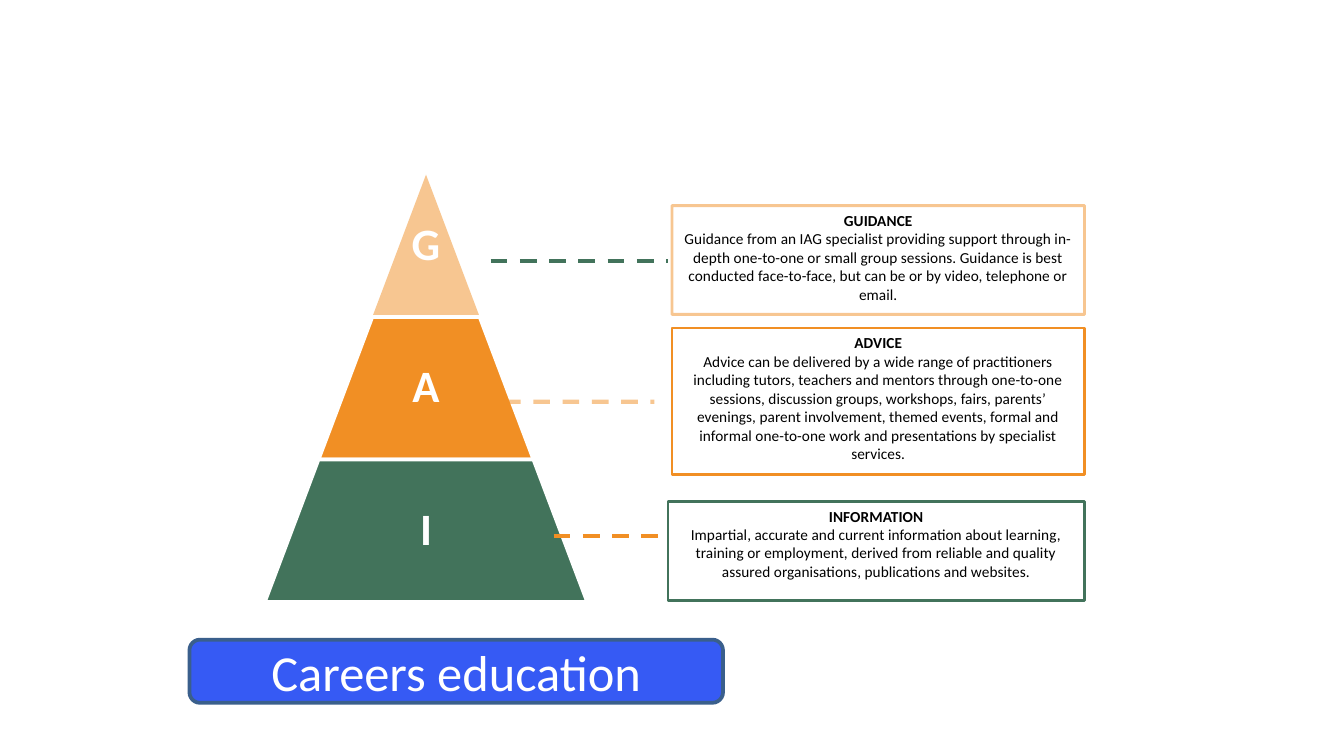
from lxml.etree import SubElement
from pptx import Presentation
from pptx.dml.color import RGBColor
from pptx.enum.dml import MSO_LINE
from pptx.enum.shapes import MSO_CONNECTOR, MSO_SHAPE
from pptx.enum.text import MSO_ANCHOR, PP_ALIGN
from pptx.oxml.ns import qn
from pptx.util import Inches, Pt

ORANGE, GREEN, WHITE, BLACK = "F18F24", "42735B", "FFFFFF", "000000"
BLUE, NAVY = "365AF4", "3A5F8C"
PALE = (ORANGE, 50)  # colour with its opacity in percent

# Top of the pyramid first: box is left, top, height; link is start x, end x, y
LEVELS = [
    {"title": "GUIDANCE", "colour": PALE, "edge": None,
     "box": (5, 1.53, 0.81), "link": (3.65, 4.97, 1.94), "link_colour": GREEN,
     "body": "Guidance from an IAG specialist providing support through "
             "in-depth one-to-one or small group sessions. Guidance is best "
             "conducted face-to-face, but can be or by video, telephone or email."},
    {"title": "ADVICE", "colour": ORANGE, "edge": WHITE,
     "box": (5, 2.44, 1.09), "link": (3.75, 4.87, 2.99), "link_colour": PALE,
     "body": "Advice can be delivered by a wide range of practitioners including "
             "tutors, teachers and mentors through one-to-one sessions, discussion "
             "groups, workshops, fairs, parents’ evenings, parent involvement, "
             "themed events, formal and informal one-to-one work and presentations "
             "by specialist services."},
    {"title": "INFORMATION", "colour": GREEN, "edge": WHITE,
     "box": (4.97, 3.73, 0.74), "link": (4.12, 4.97, 3.99), "link_colour": ORANGE,
     "body": "Impartial, accurate and current information about learning, "
             "training or employment, derived from reliable and quality assured "
             "organisations, publications and websites."},
]
FOUNDATION = "Careers education"

SLIDE_WIDTH = 10
SLIDE_HEIGHT = SLIDE_WIDTH * 9 / 16
BOX_RIGHT = 8.07
APEX_X, APEX_Y = 3.17, 1.3
TIER_HEIGHT, TIER_SLOPE = 1.06, 0.4  # each tier widens by the slope on both sides


def paint(fill, colour):
    """Fill with a hex colour, a (hex, opacity) pair, or nothing."""
    if colour is None:
        fill.background()
        return
    value, opacity = colour if isinstance(colour, tuple) else (colour, 100)
    fill.solid()
    fill.fore_color.rgb = RGBColor.from_string(value)
    if opacity < 100:
        srgb = next(fill._xPr.iter(qn("a:srgbClr")))
        SubElement(srgb, qn("a:alpha")).set("val", str(opacity * 1000))


def add_block(slide, kind, place, fill, edge, edge_width):
    block = slide.shapes.add_shape(kind, *map(Inches, place))
    block.shadow.inherit = False
    paint(block.fill, fill)
    paint(block.line.fill, edge)
    if edge:
        block.line.width = Pt(edge_width)
    return block


def write(shape, lines, size, colour, anchor, insets):
    """Put centred (text, bold) lines in a shape; insets are across, down."""
    frame = shape.text_frame
    frame.word_wrap = True
    frame.vertical_anchor = anchor
    frame.margin_left = frame.margin_right = Inches(insets[0])
    frame.margin_top = frame.margin_bottom = Inches(insets[1])
    for number, (text, bold) in enumerate(lines):
        paragraph = frame.add_paragraph() if number else frame.paragraphs[0]
        paragraph.text = text
        paragraph.alignment = PP_ALIGN.CENTER
        paragraph.font.name = "Calibri"
        paragraph.font.size = Pt(size)
        paragraph.font.bold = bold
        paragraph.font.color.rgb = RGBColor.from_string(colour)


def add_description(slide, level):
    left, top, height = level["box"]
    box = add_block(slide, MSO_SHAPE.RECTANGLE,
                    (left, top, BOX_RIGHT - left, height), None, level["colour"], 1.5)
    write(box, [(level["title"], True), (level["body"], False)],
          8.25, BLACK, MSO_ANCHOR.TOP, (0.07, 0.04))


def add_tier(slide, row, level):
    width = 2 * TIER_SLOPE * (row + 1)
    place = (APEX_X - width / 2, APEX_Y + row * TIER_HEIGHT, width, TIER_HEIGHT)
    tier = add_block(slide, MSO_SHAPE.TRAPEZOID, place,
                     level["colour"], level["edge"], 2)
    tier.adjustments[0] = TIER_SLOPE / min(width, TIER_HEIGHT)
    # The initial of a lower tier keeps clear of the sloping sides
    inset = width * 0.175 if row else 0
    left, top, _, height = place
    initial = slide.shapes.add_textbox(
        *map(Inches, (left + inset, top, width - 2 * inset, height)))
    write(initial, [(level["title"][0], True)], 24, WHITE,
          MSO_ANCHOR.MIDDLE, (0.03, 0.03))
    initial.text_frame.paragraphs[0].line_spacing = 0.9


def add_link(slide, level):
    start, end, y = map(Inches, level["link"])
    link = slide.shapes.add_connector(MSO_CONNECTOR.STRAIGHT, start, y, end, y)
    paint(link.line.fill, level["link_colour"])
    link.line.width = Pt(2.25)
    link.line.dash_style = MSO_LINE.DASH
    SubElement(link._element.spPr, qn("a:effectLst"))


def main():
    deck = Presentation()
    deck.slide_width, deck.slide_height = Inches(SLIDE_WIDTH), Inches(SLIDE_HEIGHT)
    slide = deck.slides.add_slide(deck.slide_layouts[6])

    for level in LEVELS:
        add_description(slide, level)
    for row, level in enumerate(LEVELS):
        add_tier(slide, row, level)
    for level in LEVELS:
        add_link(slide, level)

    foundation = add_block(slide, MSO_SHAPE.ROUNDED_RECTANGLE,
                           (1.41, 4.76, 3.97, 0.47), BLUE, NAVY, 2)
    write(foundation, [(FOUNDATION, False)], 27, WHITE,
          MSO_ANCHOR.MIDDLE, (0.1, 0.05))
    deck.save("out.pptx")


if __name__ == "__main__":
    main()
